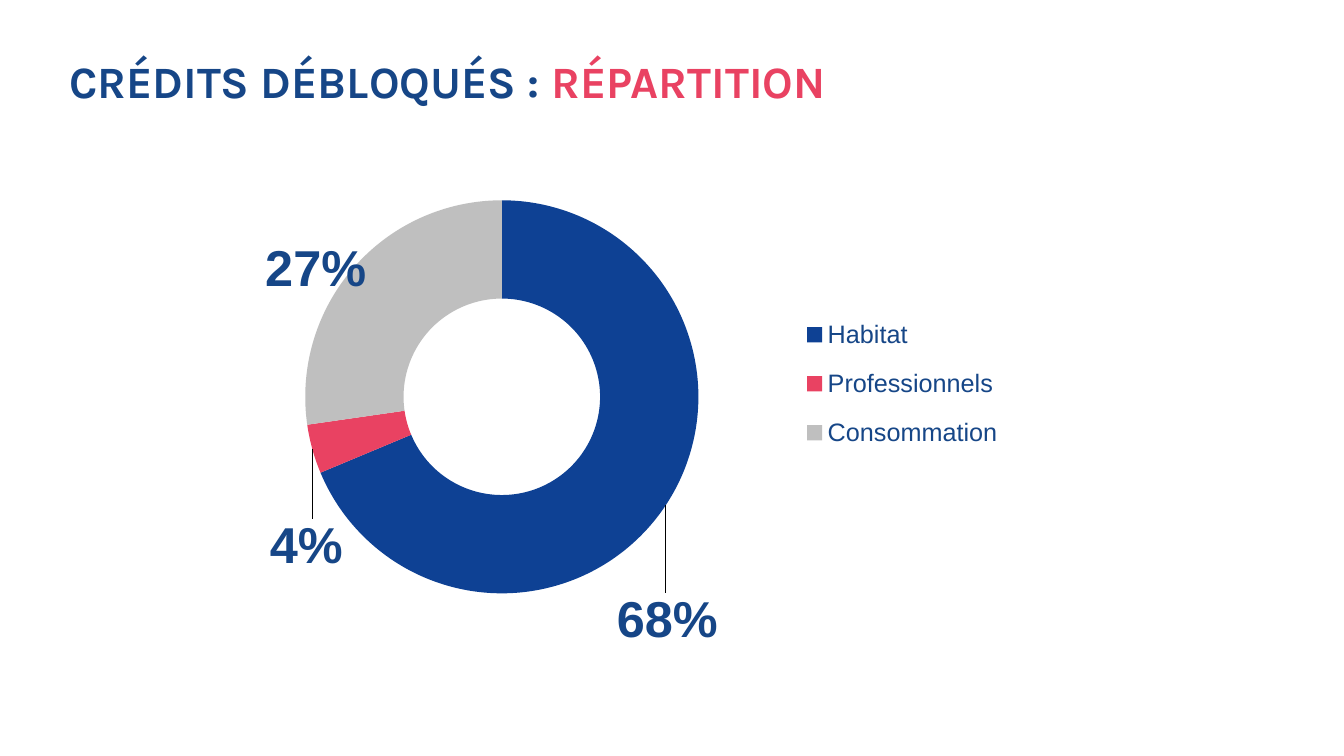
from lxml import etree
from pptx import Presentation
from pptx.chart.data import CategoryChartData
from pptx.dml.color import RGBColor
from pptx.enum.chart import XL_CHART_TYPE, XL_LEGEND_POSITION
from pptx.oxml import parse_xml
from pptx.oxml.ns import nsdecls, qn
from pptx.util import Inches, Pt

DOUGHNUT = XL_CHART_TYPE.DOUGHNUT
RIGHT = XL_LEGEND_POSITION.RIGHT
NAVY, RED = "164687", "E94262"
CELL = 0.1  # grid unit in inches

# Category: value, slice colour, label shift as shares of the chart
CREDITS = {
    "Habitat": (68, "0E4194", (0.04, 0.27)),
    "Professionnels": (4, RED, (-0.05, 0.21)),
    "Consommation": (27, "BFBFBF", (-0.07, -0.06)),
}


def rgb(color):
    return RGBColor.from_string(color)


def layout(x, y, w=None, h=None, inner=False):
    """Manual chart layout, in shares of the chart size."""
    node = parse_xml(f"<c:layout {nsdecls('c')}><c:manualLayout/></c:layout>")
    values = {"x": x, "y": y, "w": w, "h": h}
    if inner:
        values = {"layoutTarget": "inner", "xMode": "edge", "yMode": "edge", **values}
    elif w:
        values = {"xMode": "edge", "yMode": "edge", **values}
    for tag, value in values.items():
        if value is not None:
            etree.SubElement(node[0], qn(f"c:{tag}")).set("val", str(value))
    return node


class SlideBuilder:
    def __init__(self, prs):
        self.slide = prs.slides.add_slide(prs.slide_layouts[6])
        self.title_style = {"name": "Karla", "size": Pt(32), "bold": True}
        self.legend_style = {"name": "Arial", "size": Pt(18), "bold": False}
        self.label_style = {"name": "Arial", "size": Pt(36), "bold": True}

    def box(self, *cells):
        return [Inches(n * CELL) for n in cells]

    def style(self, font, values, color):
        for name, value in values.items():
            setattr(font, name, value)
        font.color.rgb = rgb(color)

    def title(self, cells, runs):
        tf = self.slide.shapes.add_textbox(*self.box(*cells)).text_frame
        tf.word_wrap = True
        p = tf.paragraphs[0]
        p.line_spacing = 0.9
        for text, color in runs:
            r = p.add_run()
            r.text = text
            self.style(r.font, self.title_style, color)

    def doughnut(self, cells, credits, plot_at, legend_at):
        data = CategoryChartData(number_format='0"%"')
        data.categories = list(credits)
        data.add_series("Series 1", [value for value, _, _ in credits.values()])
        chart = self.slide.shapes.add_chart(DOUGHNUT, *self.box(*cells), data).chart
        chart.has_title = False
        self.style(chart.font, self.legend_style, NAVY)

        # Ring
        plot = chart.plots[0]
        plot.vary_by_categories = True
        area = chart._chartSpace.chart.plotArea
        for old in area.findall(qn("c:layout")):
            area.remove(old)
        area.insert(0, layout(*plot_at, inner=True))
        area.find(".//" + qn("c:holeSize")).set("val", "75")

        # Slices and their labels
        for i, (_, color, shift) in enumerate(credits.values()):
            point = plot.series[0].points[i]
            point.format.fill.solid()
            point.format.fill.fore_color.rgb = rgb(color)
            point.format.line.fill.background()
            self.style(point.data_label.font, self.label_style, NAVY)
        for label, (_, _, shift) in zip(area.iter(qn("c:dLbl")), credits.values()):
            number = parse_xml(f"<c:numFmt {nsdecls('c')} sourceLinked=\"0\"/>")
            number.set("formatCode", '0"%"')
            label.insert(1, layout(*shift))
            label.insert(2, number)

        # Legend
        chart.has_legend = True
        legend = chart.legend
        legend.position = RIGHT
        legend.include_in_layout = False
        self.style(legend.font, self.legend_style, NAVY)
        node = chart._chartSpace.chart.find(qn("c:legend"))
        for old in node.findall(qn("c:layout")):
            node.remove(old)
        node.find(qn("c:legendPos")).addnext(layout(*legend_at))


def main():
    prs = Presentation()
    prs.slide_width, prs.slide_height = Inches(13.33), Inches(7.5)
    s = SlideBuilder(prs)
    s.title((5.9, 5.4, 122.6, 6.1),
            [("CRÉDITS DÉBLOQUÉS : ", NAVY), ("RÉPARTITION", RED)])
    s.doughnut((0, 12.6, 105.9, 52), CREDITS,
               plot_at=(0.24, 0.14, 0.46, 0.75), legend_at=(0.74, 0.33, 0.21, 0.32))
    prs.save("out.pptx")


if __name__ == "__main__":
    main()
